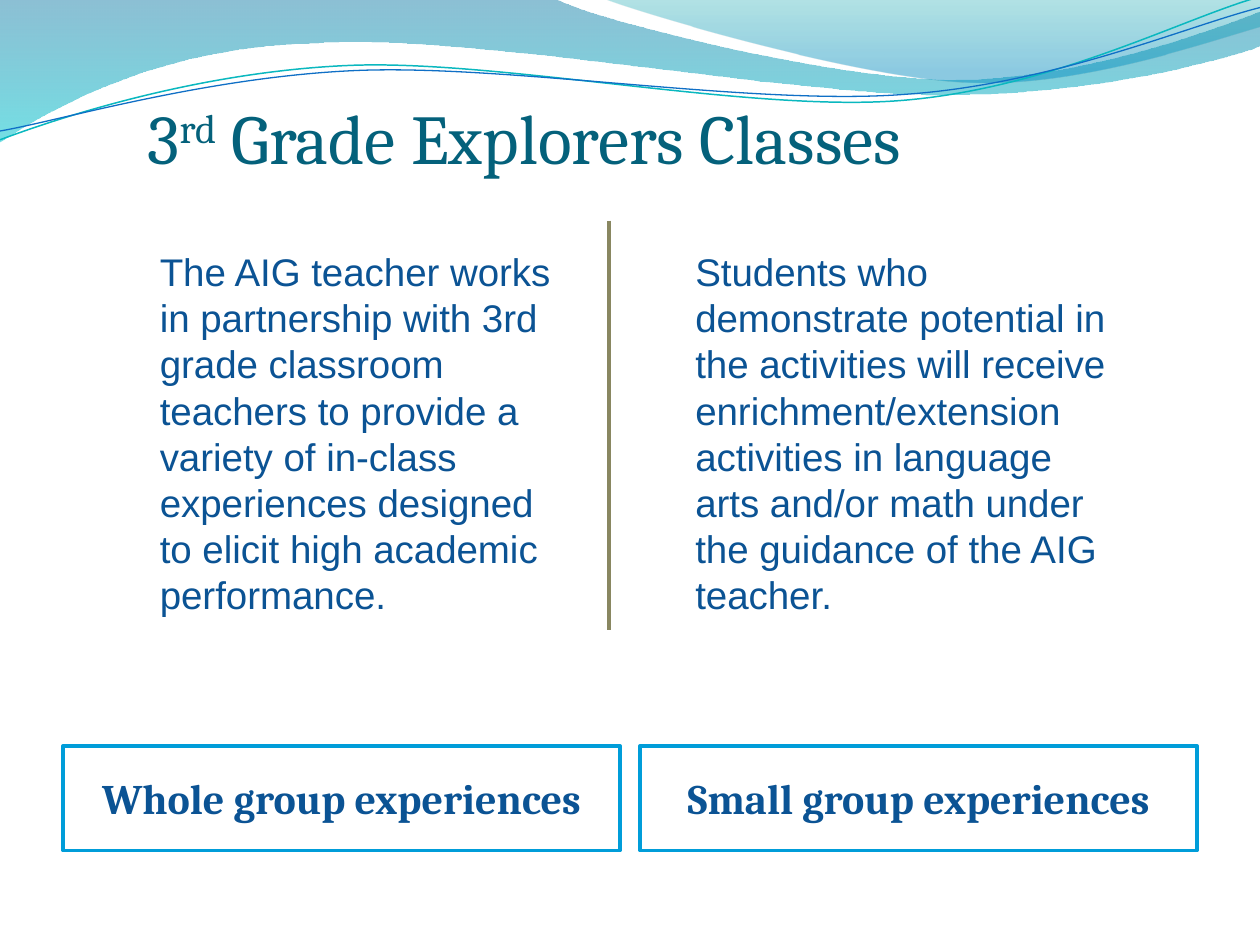
from lxml import etree
from pptx import Presentation
from pptx import util as u
from pptx.dml.color import RGBColor
from pptx.enum import shapes, text
from pptx.oxml import ns

INK, TITLE, BOX_LINE = "0B5394", "04617B", "009DD9"


def color(hex_value):
    return RGBColor.from_string(hex_value)


def add_curve(slide, start, steps, closed):
    """Outline of lines (one point) and Bezier curves (three points), in inches."""
    points = [(round(x * 100), round(y * 100)) for step in [[start], *steps] for x, y in step]
    builder = slide.shapes.build_freeform(*points[0], scale=u.Inches(0.01))
    builder.add_line_segments(points[1:], close=closed)
    shape = builder.convert_to_shape()
    shape.shadow.inherit = False
    # Join each group of three segments into one cubic curve
    segments = iter(list(shape._element.spPr.iter(ns.qn("a:lnTo"))))
    for step in steps:
        group = [next(segments) for _ in step]
        if len(group) == 3:
            curve = etree.Element(ns.qn("a:cubicBezTo"))
            group[0].addprevious(curve)
            for segment in group:
                curve.append(segment[0])
                segment.getparent().remove(segment)
    return shape


presentation = Presentation()
presentation.slide_width, presentation.slide_height = u.Inches(10), u.Inches(7.5)
slide = presentation.slides.add_slide(presentation.slide_layouts[5])

# Translucent waves across the top: start, steps, gradient stops (colour, opacity %, position)
waves = [
    ((0, 0), [
        [(4.4, -0.01)],
        [(4.76, 0.17), (6.64, 0.63), (7.58, 0.63)],
        [(8.53, 0.63), (9.58, 0.26), (10, 0.09)],
        [(10.01, 0.36)],
        [(9.83, 0.44), (8.7, 0.76), (7.46, 0.75)],
        [(6.22, 0.75), (3.82, 0.28), (2.57, 0.34)],
        [(1.29, 0.36), (0.46, 0.83), (-0.01, 1.13)],
    ], [("0074A1", 45, 0), ("00C6CF", 55, 1)]),
    ((4.79, -0.01), [
        [(5.09, 0.11), (6.82, 0.62), (7.69, 0.65)],
        [(8.56, 0.69), (9.61, 0.32), (10, 0.21)],
        [(10, 0)],
    ], [("00A1A9", 30, 0), ("008BBF", 45, 0.8)]),
]
for start, steps, stops in waves:
    wave = add_curve(slide, start, steps, True)
    wave.line.fill.background()
    wave.fill.gradient()
    wave.fill.gradient_angle = 270  # top to bottom
    for stop, (hex_value, _, position) in zip(wave.fill.gradient_stops, stops):
        stop.position = position
        stop.color.rgb = color(hex_value)
    for element, (_, opacity, _) in zip(wave._element.spPr.iter(ns.qn("a:srgbClr")), stops):
        etree.SubElement(element, ns.qn("a:alpha"), val=str(opacity * 1000))

# Thin lines following the waves
wave_lines = [
    ((0, 1.11), [
        [(0.48, 0.93), (1.58, 0.57), (2.77, 0.52)],
        [(3.95, 0.47), (5.93, 0.89), (7.13, 0.8)],
        [(8.33, 0.71), (9.38, 0.15), (9.98, -0.02)],
    ], "0AB8BF", 0.85),
    ((0, 1.04), [
        [(0.47, 0.96), (1.64, 0.61), (2.83, 0.56)],
        [(4.03, 0.51), (5.97, 0.84), (7.17, 0.75)],
        [(8.36, 0.67), (9.41, 0.21), (10, 0.06)],
    ], "0F6FC6", 0.75),
]
for start, steps, hex_value, width in wave_lines:
    wave_line = add_curve(slide, start, steps, False)
    wave_line.fill.background()
    wave_line.line.color.rgb = color(hex_value)
    wave_line.line.width = u.Pt(width)

# Title, in front of the waves
title = slide.shapes.title
slide.shapes._spTree.append(title._element)
title.left, title.top, title.width, title.height = map(u.Inches, (1.17, 0.42, 8, 1))
frame = title.text_frame
frame.auto_size = text.MSO_AUTO_SIZE.NONE
frame.vertical_anchor = text.MSO_ANCHOR.BOTTOM
frame.margin_left = frame.margin_right = frame.margin_bottom = 0
frame.margin_top = u.Inches(0.05)
paragraph = frame.paragraphs[0]
paragraph.alignment = text.PP_ALIGN.LEFT
for words, baseline in [("3", 0), ("rd", 30), (" Grade Explorers Classes", 0)]:
    run = paragraph.add_run()
    run.text = words
    run.font.name, run.font.size = "Cambria", u.Pt(40)
    run.font.color.rgb = color(TITLE)
    if baseline:
        run.font._element.set("baseline", str(baseline * 1000))

# Two columns: description above, framed label below
columns = [
    (1.17, 3.33, 3.06, 0.5, "Whole group experiences",
     "The AIG teacher works in partnership with 3rd grade classroom teachers to provide "
     "a variety of in-class experiences designed to elicit high academic performance."),
    (5.42, 3.5, 3.33, 5.08, "Small group experiences",
     "Students who demonstrate potential in the activities will receive enrichment/extension "
     "activities in language arts and/or math under the guidance of the AIG teacher."),
]
for text_left, text_width, text_height, box_left, label, description in columns:
    description_box = slide.shapes.add_textbox(
        u.Inches(text_left), u.Inches(1.92), u.Inches(text_width), u.Inches(text_height))
    description_box.text_frame.word_wrap = True
    paragraph = description_box.text_frame.paragraphs[0]
    run = paragraph.add_run()
    run.text = description
    run.font.name, run.font.size = "Arial", u.Pt(22)
    run.font.color.rgb = color(INK)

    label_box = slide.shapes.add_shape(
        shapes.MSO_SHAPE.RECTANGLE, u.Inches(box_left), u.Inches(5.92), u.Inches(4.42), u.Inches(0.83))
    label_box.shadow.inherit = False
    label_box.fill.solid()
    label_box.fill.fore_color.rgb = color("FFFFFF")
    label_box.line.color.rgb = color(BOX_LINE)
    label_box.line.width = u.Pt(2)
    label_box.text_frame.vertical_anchor = text.MSO_ANCHOR.MIDDLE
    paragraph = label_box.text_frame.paragraphs[0]
    paragraph.alignment = text.PP_ALIGN.CENTER
    run = paragraph.add_run()
    run.text = label
    run.font.name, run.font.size, run.font.bold = "Cambria", u.Pt(24), True
    run.font.color.rgb = color(INK)

# Divider between the columns
divider = slide.shapes.add_connector(
    shapes.MSO_CONNECTOR.STRAIGHT, u.Inches(4.83), u.Inches(1.75), u.Inches(4.83), u.Inches(5))
divider.line.color.rgb = color("898761")
divider.line.width = u.Pt(2.25)
etree.SubElement(divider._element.spPr, ns.qn("a:effectLst"))

presentation.save("out.pptx")
